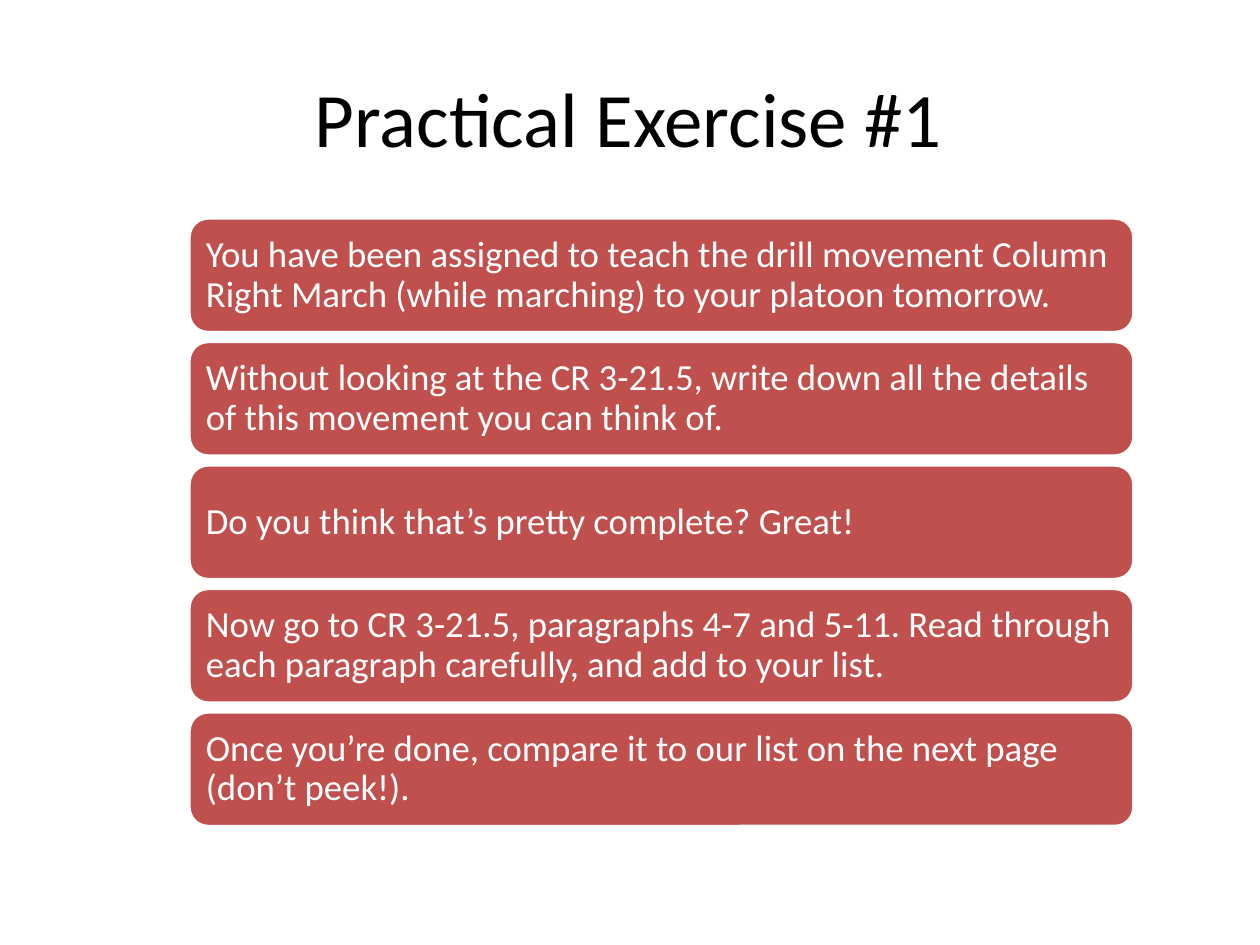
from dataclasses import dataclass

from pptx import Presentation
from pptx.dml.color import RGBColor
from pptx.enum.shapes import MSO_SHAPE as Shape
from pptx.enum.text import MSO_ANCHOR as Anchor, PP_ALIGN as Align
from pptx.util import Inches, Pt


@dataclass(frozen=True)
class Theme:
    font: str = "Calibri"
    title_size: int = 44
    step_size: int = 21
    title_color: RGBColor = RGBColor(0x00, 0x00, 0x00)
    step_fill: RGBColor = RGBColor(0xC0, 0x50, 0x4D)
    white: RGBColor = RGBColor(0xFF, 0xFF, 0xFF)


THEME = Theme()

STEPS = [
    "You have been assigned to teach the drill movement Column Right March "
    "(while marching) to your platoon tomorrow.",
    "Without looking at the CR 3-21.5, write down all the details of this "
    "movement you can think of.",
    "Do you think that’s pretty complete? Great!",
    "Now go to CR 3-21.5, paragraphs 4-7 and 5-11. Read through each "
    "paragraph carefully, and add to your list.",
    "Once you’re done, compare it to our list on the next page (don’t peek!).",
]

# Step column, in inches
STEP_LEFT, STEP_TOP = 1.5, 1.73
STEP_WIDTH, STEP_HEIGHT = 7.5, 0.91
STEP_PITCH = 0.98
STEP_INSET = 0.09


def write_text(frame, text, size, color, align):
    frame.text = text
    frame.word_wrap = True
    frame.vertical_anchor = Anchor.MIDDLE
    paragraph = frame.paragraphs[0]
    paragraph.alignment = align
    font = paragraph.runs[0].font
    font.name = THEME.font
    font.size = Pt(size)
    font.color.rgb = color
    return paragraph


def add_title(slide, text):
    title = slide.shapes.add_textbox(
        Inches(1.24), Inches(0.3), Inches(7.5), Inches(1.25))
    write_text(title.text_frame, text, THEME.title_size,
               THEME.title_color, Align.CENTER)


def add_step(slide, text, top):
    step = slide.shapes.add_shape(
        Shape.ROUNDED_RECTANGLE, Inches(STEP_LEFT), Inches(top),
        Inches(STEP_WIDTH), Inches(STEP_HEIGHT))
    step.shadow.inherit = False
    step.fill.solid()
    step.fill.fore_color.rgb = THEME.step_fill
    step.line.color.rgb = THEME.white
    step.line.width = Pt(2)

    frame = step.text_frame
    frame.margin_left = frame.margin_right = Inches(STEP_INSET)
    frame.margin_top = frame.margin_bottom = Inches(STEP_INSET)
    paragraph = write_text(frame, text, THEME.step_size,
                           THEME.white, Align.LEFT)
    paragraph.line_spacing = 0.9


def main():
    deck = Presentation()
    deck.slide_width, deck.slide_height = Inches(10), Inches(7.5)
    slide = deck.slides.add_slide(deck.slide_layouts[6])

    # Heading
    add_title(slide, "Practical Exercise #1")

    # Exercise steps, evenly stacked
    for row, text in enumerate(STEPS):
        add_step(slide, text, STEP_TOP + row * STEP_PITCH)

    deck.save("out.pptx")


if __name__ == "__main__":
    main()
